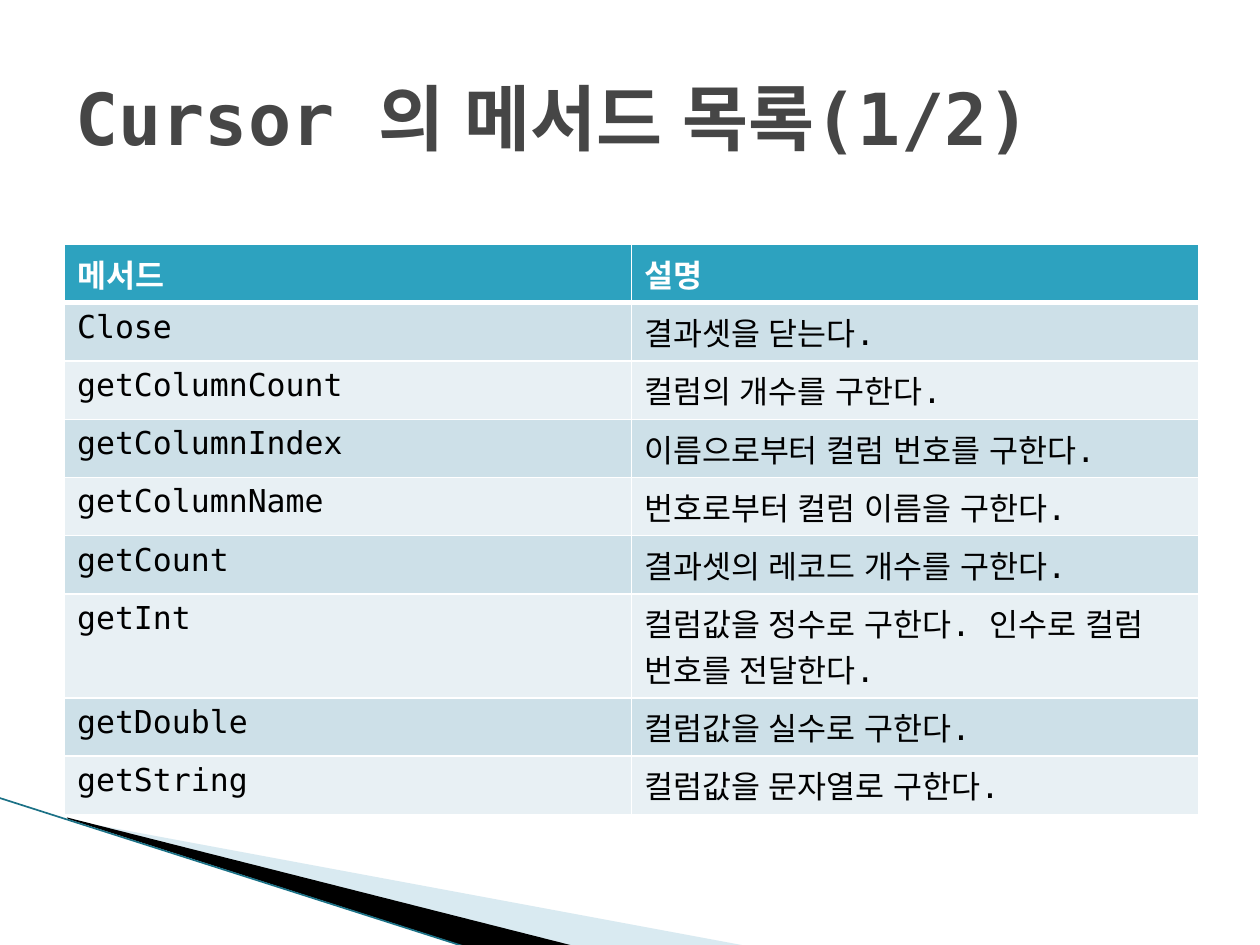
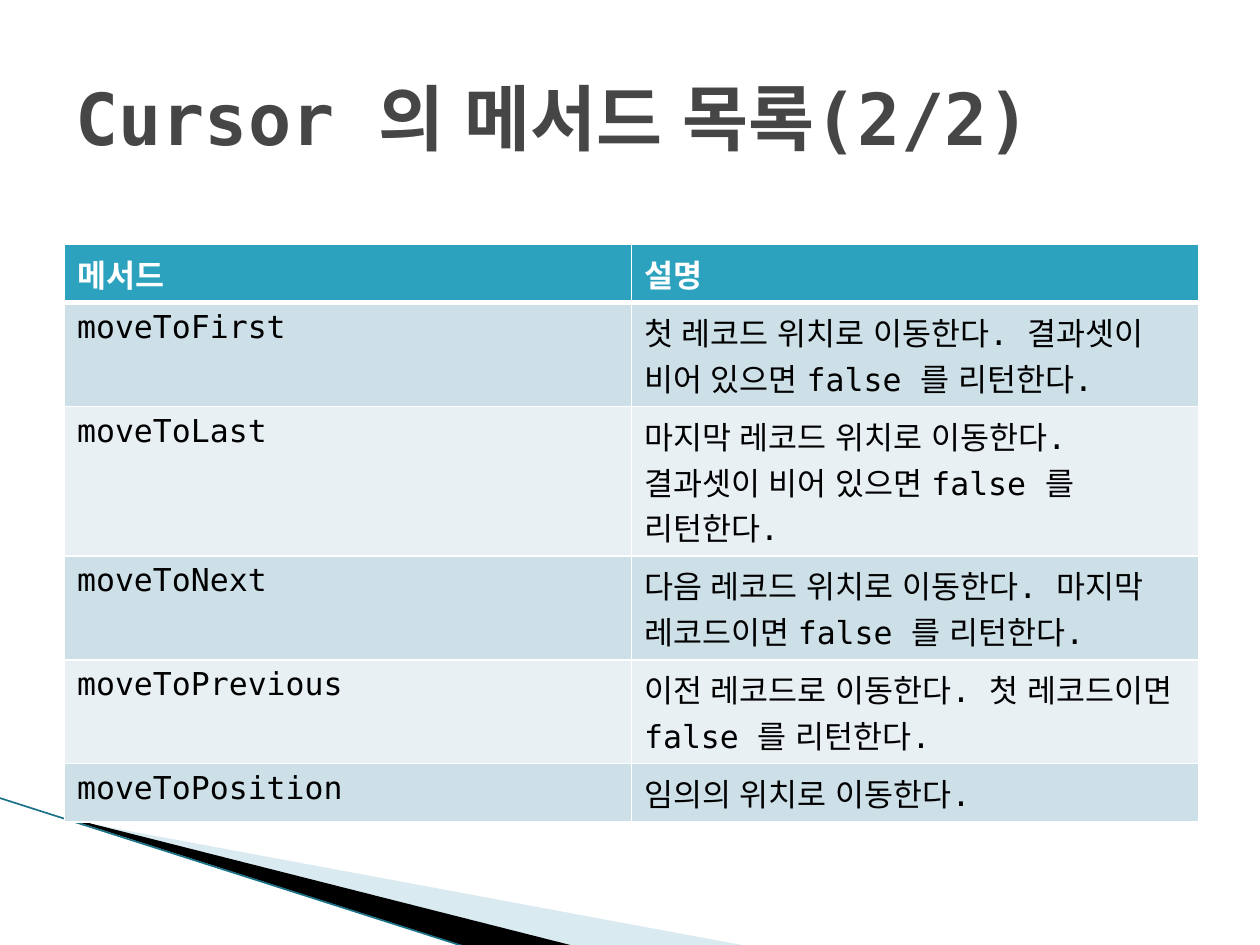
import pptx
import pptx.dml.color
import pptx.enum.lang
import pptx.enum.shapes
import pptx.enum.text
import pptx.oxml
import pptx.oxml.ns
import pptx.util

Cm = pptx.util.Cm
FONT = "DejaVu Sans Mono"
KOREAN_FONT = "Noto Sans CJK KR"
WHITE = "FFFFFF"
BLACK = "000000"
HEADER_FILL = "2DA2BF"
BAND_FILLS = ("CDE0E8", "E8F0F4")
TITLE_FORMAT = {"size": pptx.util.Pt(41), "bold": True}
HEADER_FORMAT = {"size": pptx.util.Pt(18), "bold": True}
BODY_FORMAT = {"size": pptx.util.Pt(18), "bold": False}

HEADINGS = ("메서드", "설명")
METHOD_PAGES = (
    (
        ("Close", "결과셋을 닫는다."),
        ("getColumnCount", "컬럼의 개수를 구한다."),
        ("getColumnIndex", "이름으로부터 컬럼 번호를 구한다."),
        ("getColumnName", "번호로부터 컬럼 이름을 구한다."),
        ("getCount", "결과셋의 레코드 개수를 구한다."),
        ("getInt", "컬럼값을 정수로 구한다. 인수로 컬럼 번호를 전달한다."),
        ("getDouble", "컬럼값을 실수로 구한다."),
        ("getString", "컬럼값을 문자열로 구한다."),
    ),
    (
        ("moveToFirst", "첫 레코드 위치로 이동한다. 결과셋이 비어 있으면 false 를 리턴한다."),
        ("moveToLast", "마지막 레코드 위치로 이동한다. 결과셋이 비어 있으면 false 를 리턴한다."),
        ("moveToNext", "다음 레코드 위치로 이동한다. 마지막 레코드이면 false 를 리턴한다."),
        ("moveToPrevious", "이전 레코드로 이동한다. 첫 레코드이면 false 를 리턴한다."),
        ("moveToPosition", "임의의 위치로 이동한다."),
    ),
)


def color(value):
    """Turn a hex string into a colour."""
    return pptx.dml.color.RGBColor.from_string(value)


def add_element(parent, xml):
    """Append an element of the drawing namespace and return it."""
    tag, rest = xml.split(" ", 1)
    element = pptx.oxml.parse_xml(f"<{tag} {pptx.oxml.ns.nsdecls('a')} {rest}")
    parent.append(element)
    return element


def write(frame, text, formats, text_color):
    """Write one formatted line into a text frame."""
    span = frame.paragraphs[0].add_run()
    span.text = text
    span.font.name = FONT
    span.font.language_id = pptx.enum.lang.MSO_LANGUAGE_ID.KOREAN
    span.font.color.rgb = color(text_color)
    for name, value in formats.items():
        setattr(span.font, name, value)
    add_element(span.font._element, f'a:ea typeface="{KOREAN_FONT}"/>')


def add_title(page, text):
    """Add the slide title."""
    box = page.shapes.add_textbox(Cm(1.27), Cm(0.76), Cm(22.86), Cm(3.18))
    box.text_frame.word_wrap = True
    box.text_frame.vertical_anchor = pptx.enum.text.MSO_ANCHOR.MIDDLE
    write(box.text_frame, text, TITLE_FORMAT, "464646")


def add_wedge(page, points, fill, opacity=100):
    """Add a filled outline through points given in centimetres."""
    start, *others = [(Cm(x), Cm(y)) for x, y in points]
    builder = page.shapes.build_freeform(*start)
    builder.add_line_segments(others)
    wedge = builder.convert_to_shape()
    wedge.shadow.inherit = False
    wedge.line.fill.background()
    wedge.fill.solid()
    wedge.fill.fore_color.rgb = color(fill)
    if opacity < 100:
        tint = wedge.fill._xPr.find(".//" + pptx.oxml.ns.qn("a:srgbClr"))
        add_element(tint, f'a:alpha val="{opacity * 1000}"/>')


def add_corner(page):
    """Add the sweeping wedges and line at the lower left."""
    add_wedge(page, ((1.4, 16.53), (15.11, 19.08), (11.58, 19.08), (1.4, 16.51)),
              "A0CBDC", 40)
    add_wedge(page, ((1.35, 16.48), (11.61, 19.08), (9.45, 19.1), (1.37, 16.51)),
              BLACK)
    edge = page.shapes.add_connector(
        pptx.enum.shapes.MSO_CONNECTOR.STRAIGHT,
        Cm(-0.03), Cm(16.08), Cm(9.42), Cm(19.1))
    edge.line.color.rgb = color("1B7186")
    edge.line.width = pptx.util.Pt(0.95)
    add_element(edge._element.spPr, "a:effectLst />")


def format_cell(cell, fill, top, bottom):
    """Give a cell white borders, widths in points, and a fill."""
    properties = cell._tc.get_or_add_tcPr()
    for side, width in {"L": 1, "R": 1, "T": top, "B": bottom}.items():
        add_element(properties,
                    f'a:ln{side} w="{pptx.util.Pt(width)}"><a:solidFill>'
                    f'<a:srgbClr val="{WHITE}"/></a:solidFill></a:ln{side}>')
    cell.fill.solid()
    cell.fill.fore_color.rgb = color(fill)


def add_method_table(page, methods):
    """Add a banded table of methods and descriptions."""
    rows = (HEADINGS, *methods)
    header_height, row_height = Cm(0.43), Cm(1.03)
    table = page.shapes.add_table(
        len(rows), len(HEADINGS), Cm(1.3), Cm(4.93), Cm(22.86),
        header_height + row_height * len(methods)).table
    for index, texts in enumerate(rows):
        header = index == 0
        table.rows[index].height = header_height if header else row_height
        fill = HEADER_FILL if header else BAND_FILLS[(index - 1) % 2]
        for column, text in enumerate(texts):
            cell = table.cell(index, column)
            format_cell(cell, fill, 3 if index == 1 else 1, 3 if header else 1)
            write(cell.text_frame, text,
                  HEADER_FORMAT if header else BODY_FORMAT,
                  WHITE if header else BLACK)


def main():
    """Build and save the deck."""
    deck = pptx.Presentation()
    deck.slide_width, deck.slide_height = Cm(25.4), Cm(19.05)
    for number, methods in enumerate(METHOD_PAGES, 1):
        page = deck.slides.add_slide(deck.slide_layouts[6])
        add_corner(page)
        add_method_table(page, methods)
        add_title(page, f"Cursor 의 메서드 목록({number}/{len(METHOD_PAGES)})")
    deck.save("out.pptx")


if __name__ == "__main__":
    main()
